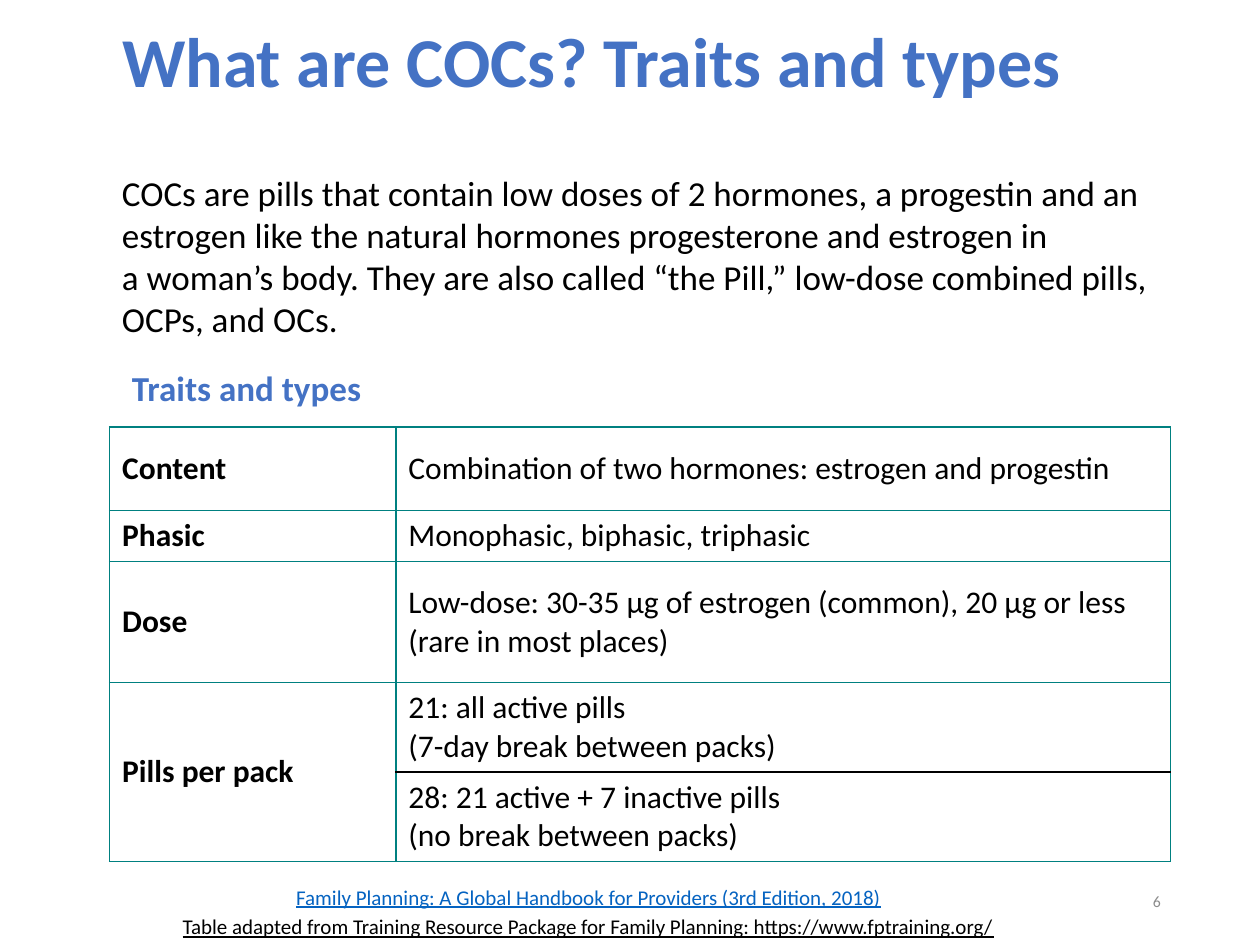
from dataclasses import dataclass

from lxml.etree import SubElement
from pptx import Presentation
from pptx.dml.color import RGBColor
from pptx.enum.text import MSO_ANCHOR as Anchor, MSO_AUTO_SIZE as AutoSize, PP_ALIGN as Align
from pptx.oxml.ns import qn
from pptx.util import Cm, Pt

BLUE = RGBColor(0x44, 0x72, 0xC4)
TEAL = RGBColor(0x00, 0x80, 0x80)
BLACK = RGBColor(0x00, 0x00, 0x00)
GREY = RGBColor(0x8C, 0x8C, 0x8C)
LINK_BLUE = RGBColor(0x05, 0x63, 0xC1)

TITLE = "What are COCs? Traits and types"
INTRO = [
    "COCs are pills that contain low doses of 2 hormones, a progestin and an",
    "estrogen like the natural hormones progesterone and estrogen in",
    "a woman’s body. They are also called “the Pill,” low-dose combined pills, OCPs, and OCs.",
]
TRAITS = [
    ("Content", "Combination of two hormones: estrogen and progestin"),
    ("Phasic", "Monophasic, biphasic, triphasic"),
    ("Dose", "Low-dose: 30-35 µg of estrogen (common), 20 µg or less (rare in most places)"),
    ("Pills per pack", "21: all active pills\v(7-day break between packs)"),
    ("", "28: 21 active + 7 inactive pills\v(no break between packs)"),
]
HANDBOOK = "Family Planning: A Global Handbook for Providers (3rd Edition, 2018)"
TABLE_SOURCE = (
    "Table adapted from Training Resource Package for Family Planning: https://www.fptraining.org/"
)


@dataclass
class SlideBuilder:
    page: object
    font_name: str = "Calibri"

    def format(self, paragraph, size, color=BLACK, bold=False, underline=False):
        font = paragraph.font
        font.name, font.size = self.font_name, Pt(size)
        font.bold, font.underline = bold, underline
        font.color.rgb = color

    def title(self, text, left, top, width, height):
        box = self.page.shapes.title
        box.left, box.top, box.width, box.height = map(Cm, (left, top, width, height))
        frame = box.text_frame
        frame.text = text
        frame.vertical_anchor = Anchor.MIDDLE
        paragraph = frame.paragraphs[0]
        paragraph.alignment = Align.LEFT
        paragraph.line_spacing = 0.9
        self.format(paragraph, 40, BLUE, bold=True)

    def text(self, lines, place, size, align=Align.LEFT, anchor=Anchor.TOP, **style):
        box = self.page.shapes.add_textbox(*map(Cm, place))
        frame = box.text_frame
        frame.word_wrap = True
        frame.auto_size = AutoSize.NONE
        frame.vertical_anchor = anchor
        frame.text = "\n".join(lines)
        for paragraph in frame.paragraphs:
            paragraph.alignment = align
            self.format(paragraph, size, **style)

    def borders(self, cell, **colors):
        properties = cell._tc.get_or_add_tcPr()
        for side in "LRTB":
            line = SubElement(properties, qn(f"a:ln{side}"), w=str(Pt(1)))
            fill = SubElement(line, qn("a:solidFill"))
            SubElement(fill, qn("a:srgbClr"), val=str(colors.get(side, TEAL)))

    def table(self, rows, left, top, widths, heights):
        size = (sum(widths), sum(heights))
        grid = self.page.shapes.add_table(
            len(rows), len(widths), *map(Cm, (left, top, *size))
        ).table
        grid.first_row = grid.horz_banding = False
        for column, width in zip(grid.columns, widths):
            column.width = Cm(width)
        for row, height in zip(grid.rows, heights):
            row.height = Cm(height)
        last = len(rows) - 1
        for row_index, row in enumerate(rows):
            for column_index, text in enumerate(row):
                cell = grid.cell(row_index, column_index)
                cell.text = text
                cell.vertical_anchor = Anchor.MIDDLE
                for paragraph in cell.text_frame.paragraphs:
                    self.format(paragraph, 18, bold=column_index == 0)
                divider = {last - 1: {"B": BLACK}, last: {"T": BLACK}}
                self.borders(cell, **(divider.get(row_index, {}) if column_index else {}))
                cell.fill.background()
        grid.cell(last - 1, 0).merge(grid.cell(last, 0))


def main():
    deck = Presentation()
    deck.slide_width, deck.slide_height = Cm(25.4), Cm(19.05)
    slide = SlideBuilder(deck.slides.add_slide(deck.slide_layouts[5]))
    slide.title(TITLE, 2.21, -0.03, 22.86, 2.69)
    slide.table(TRAITS, 2.21, 8.61, (5.77, 15.62), (1.68, 1, 2.44, 1.75, 1.75))
    slide.text(INTRO, (2.21, 3.33, 22.86, 3.68), 20)
    slide.text(["Traits and types"], (2.41, 7.26, 5.18, 1.12), 20, color=BLUE, bold=True)
    slide.text(["6"], (17.93, 17.65, 5.72, 1.02), 9, Align.RIGHT, Anchor.MIDDLE, color=GREY)
    slide.text([TABLE_SOURCE], (3.43, 18.29, 17.63, 0.69), 12, underline=True)
    slide.text([HANDBOOK], (5.72, 17.7, 14.38, 0.56), 12, color=LINK_BLUE, underline=True)
    deck.save("out.pptx")


if __name__ == "__main__":
    main()
